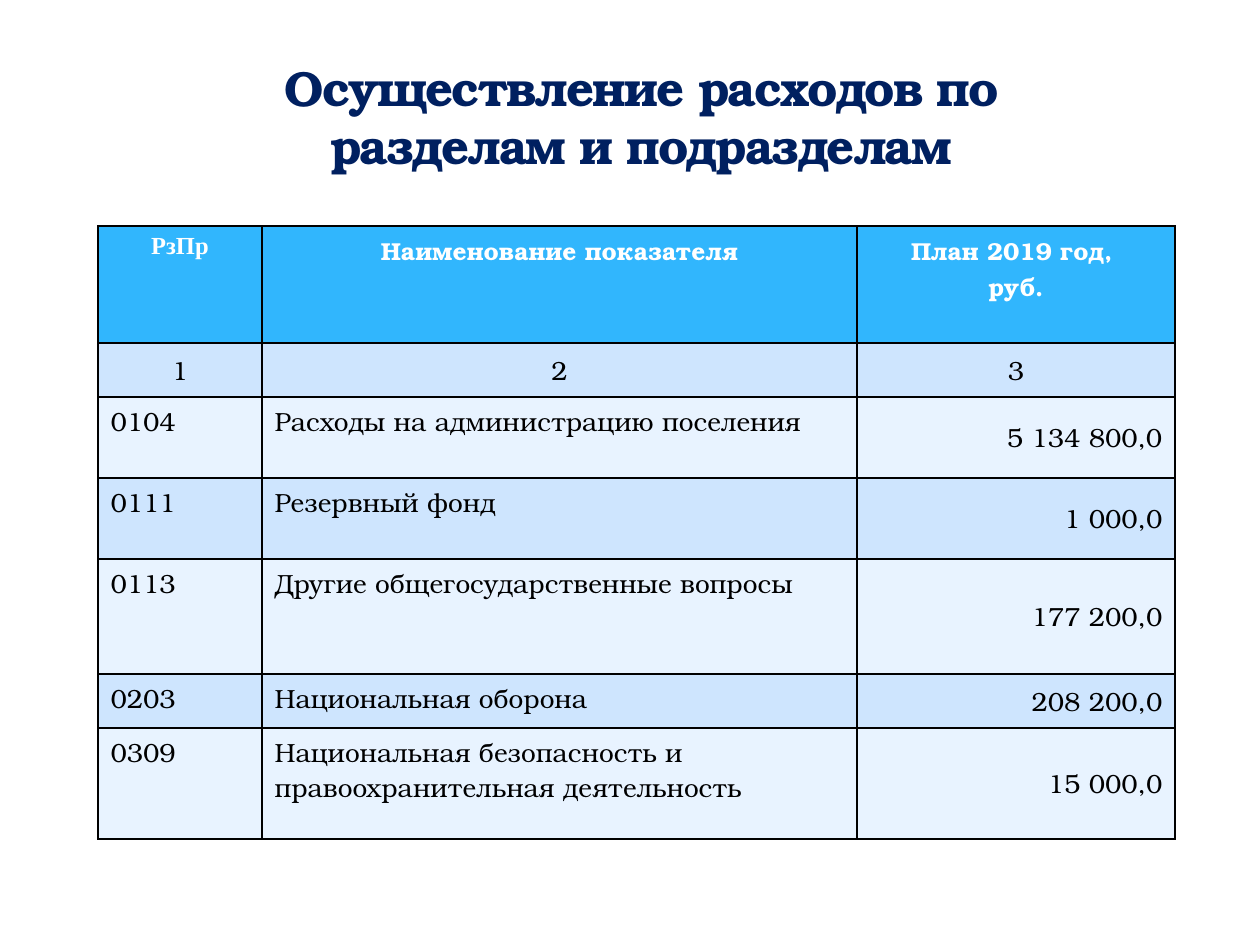
from dataclasses import dataclass

from lxml import etree
from pptx import Presentation
from pptx import util as u
from pptx.dml.color import RGBColor
from pptx.enum import text
from pptx.oxml import ns

PX = u.Inches(1) // 126
SERIF = "TeX Gyre Bonum"
NAVY = RGBColor(0x00, 0x20, 0x60)
OUTLINE = RGBColor(0xAF, 0xCC, 0xDE)
SKY = RGBColor(0x31, 0xB6, 0xFD)
PALE = RGBColor(0xCE, 0xE5, 0xFE)
PALER = RGBColor(0xE8, 0xF3, 0xFF)
WHITE = RGBColor(0xFF, 0xFF, 0xFF)
BLACK = RGBColor(0x00, 0x00, 0x00)
LEFT, CENTER, RIGHT = text.PP_ALIGN.LEFT, text.PP_ALIGN.CENTER, text.PP_ALIGN.RIGHT
TOP, MIDDLE = text.MSO_ANCHOR.TOP, text.MSO_ANCHOR.MIDDLE


@dataclass(frozen=True)
class Style:
    size: int
    color: RGBColor
    bold: bool = False
    font: str = SERIF


@dataclass(frozen=True)
class Row:
    height: int
    texts: tuple[str, str, str]


TITLE = Style(28, NAVY, True)
HEADER = Style(14, WHITE, True)
HEADER_CODE = Style(14, WHITE, True, "Times New Roman")
BODY = Style(15, BLACK)
COLUMN_WIDTHS = (164, 595, 318)
ROWS = (
    Row(117, ("РзПр", "Наименование показателя", "План 2019 год, \nруб.")),
    Row(54, ("1", "2", "3")),
    Row(81, ("0104", "Расходы на администрацию поселения", "5 134 800,0")),
    Row(81, ("0111", "Резервный фонд", "1 000,0")),
    Row(115, ("0113", "Другие общегосударственные вопросы", "177 200,0")),
    Row(54, ("0203", "Национальная оборона", "208 200,0")),
    Row(111, ("0309", "Национальная безопасность и правоохранительная деятельность", "15 000,0")),
)


def add_line(parent, tag: str, width: float, color: RGBColor, alpha: int = 100) -> None:
    line = etree.SubElement(parent, ns.qn(tag), w=str(u.Pt(width)))
    fill = etree.SubElement(line, ns.qn("a:solidFill"))
    shade = etree.SubElement(fill, ns.qn("a:srgbClr"), val=str(color))
    if alpha < 100:
        etree.SubElement(shade, ns.qn("a:alpha"), val=str(alpha * 1000))


def add_span(para, words: str, style: Style):
    span = para.add_run()
    span.text = words
    span.font.size = u.Pt(style.size)
    span.font.name = style.font
    span.font.bold = style.bold
    span.font.color.rgb = style.color
    return span


def add_title(page, words: str) -> None:
    box = page.shapes.add_textbox(157 * PX, 118 * PX, 968 * PX, 63 * PX)
    frame = box.text_frame
    frame.word_wrap = True
    frame.vertical_anchor = text.MSO_ANCHOR.BOTTOM
    para = frame.paragraphs[0]
    para.alignment = CENTER
    span = add_span(para, words, TITLE)
    properties = span.font._element
    properties.set("spc", "-100")
    add_line(properties, "a:ln", 0.25, OUTLINE, 25)
    properties.insert(0, properties[-1])


def fill_cell(cell, words: str, style: Style, align, anchor, color: RGBColor) -> None:
    frame = cell.text_frame
    for index, line in enumerate(words.split("\n")):
        para = frame.add_paragraph() if index else frame.paragraphs[0]
        para.alignment = align
        add_span(para, line, style)
    cell.vertical_anchor = anchor
    properties = cell._tc.get_or_add_tcPr()
    for side in ("a:lnL", "a:lnR", "a:lnT", "a:lnB"):
        add_line(properties, side, 1, BLACK)
    cell.fill.solid()
    cell.fill.fore_color.rgb = color


def add_expenses(page) -> None:
    width, height = sum(COLUMN_WIDTHS), sum(row.height for row in ROWS)
    table = page.shapes.add_table(
        len(ROWS), len(COLUMN_WIDTHS), 98 * PX, 226 * PX, width * PX, height * PX
    ).table
    for column, column_width in zip(table.columns, COLUMN_WIDTHS):
        column.width = column_width * PX
    for r, row in enumerate(ROWS):
        table.rows[r].height = row.height * PX
        color = SKY if r == 0 else PALE if r % 2 else PALER
        for c, words in enumerate(row.texts):
            style = BODY if r else HEADER if c else HEADER_CODE
            align = CENTER if r < 2 else RIGHT if c == 2 else LEFT
            anchor = MIDDLE if r == 1 or (r > 1 and c == 2) else TOP
            fill_cell(table.cell(r, c), words, style, align, anchor, color)


def main() -> None:
    deck = Presentation()
    deck.slide_width, deck.slide_height = u.Inches(10), u.Inches(7.5)
    page = deck.slides.add_slide(deck.slide_layouts[6])
    add_expenses(page)
    add_title(page, "Осуществление расходов по разделам и подразделам")
    deck.save("out.pptx")


if __name__ == "__main__":
    main()
